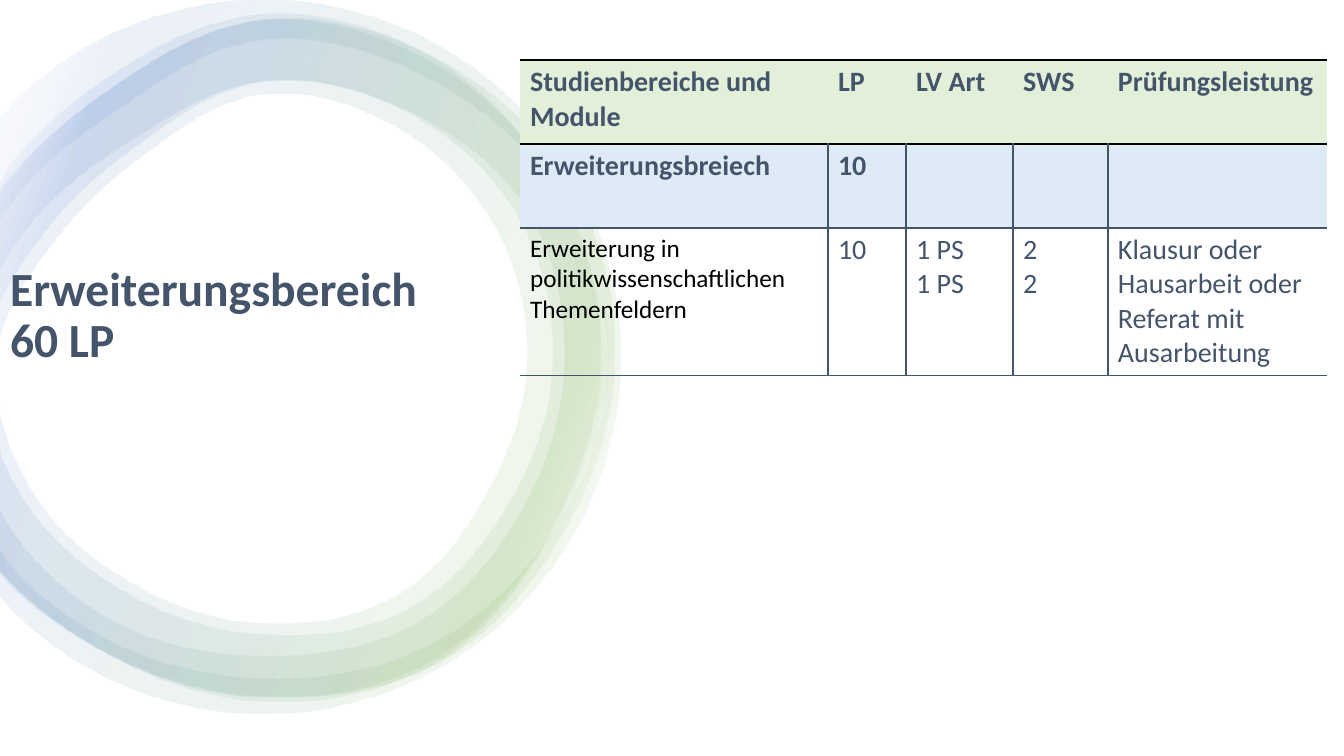
from collections import namedtuple
from dataclasses import dataclass
from math import cos, radians, sin

from lxml import etree
from pptx import Presentation
from pptx.dml.color import RGBColor
from pptx.enum.text import MSO_ANCHOR, PP_ALIGN
from pptx.oxml import parse_xml
from pptx.oxml.ns import qn
from pptx.util import Pt

PX = 914400 / 100.8
TOP = MSO_ANCHOR.TOP
LEFT = PP_ALIGN.LEFT
TITLE_ONLY = 5
DRAWING = "http://schemas.openxmlformats.org/drawingml/2006/main"
NO_STYLE = "{2D5ABB26-0587-4C30-8999-92F81FD0307C}"
Box = namedtuple("Box", "left top width height")


@dataclass(frozen=True)
class Theme:
    font: str = "Calibri"
    ink: str = "44546A"
    black: str = "000000"
    header: str = "E2F0D9"
    section: str = "DEEBF7"
    ring_stops: tuple = ((2, "FFFFFF"), (16, "70AD47"), (85, "4472C4"), (100, "FFFFFF"))
    ring_alpha: int = 10
    ring_angle: int = 200
    title_size: int = 34
    table_size: int = 20
    module_size: int = 18


THEME = Theme()


def inset(radii, depth):
    return [radius - depth for radius in radii]


ROUND = [357] * 12
ROUND_HOLE = [344, 337, 332, 321, 323, 328, 310, 296, 287, 317, 323, 336]
SOFT = [344, 337, 350, 344, 335, 345, 340, 320, 320, 343, 344, 338]
SOFT_HOLE = [300, 299, 306, 298, 303, 305, 295, 268, 254, 276, 285, 301]
WIDE = [351, 347, 352, 339, 334, 340, 340, 313, 308, 337, 345, 352]
NARROW = [338, 335, 346, 339, 334, 340, 340, 312, 309, 337, 340, 340]
RINGS = [(SOFT, SOFT_HOLE), (WIDE, inset(WIDE, 62)),
         (NARROW, inset(NARROW, 74)), (ROUND, ROUND_HOLE)]

COLUMNS = [308, 78, 107, 95, 219]
ROWS = [84, 84, 146]
MODULES = [
    ["Studienbereiche und Module", "LP", "LV Art", "SWS", "Prüfungsleistung"],
    ["Erweiterungsbreiech", "10", "", "", ""],
    ["Erweiterung in politikwissenschaftlichen Themenfeldern", "10", "1 PS\n1 PS", "2\v2",
     "Klausur oder Hausarbeit oder Referat mit Ausarbeitung"],
]


def emu(length):
    return round(length * PX)


def smooth_loop(radii, center_x, center_y, steps=10):
    count = len(radii)
    loop = []
    for index in range(count):
        a, b, c, d = (radii[(index + shift) % count] for shift in (-1, 0, 1, 2))
        for step in range(steps):
            t = step / steps
            radius = (b + t * (c - a) / 2 + t * t * (a - 2.5 * b + 2 * c - d / 2)
                      + t ** 3 * (1.5 * (b - c) + (d - a) / 2))
            angle = radians(360 / count * (index + t))
            x = max(0, center_x + radius * cos(angle))
            loop.append((emu(x), emu(center_y + radius * sin(angle))))
    return loop


def ring_gradient():
    stops = "".join(
        f'<a:gs pos="{position * 1000}"><a:srgbClr val="{color}">'
        f'<a:alpha val="{THEME.ring_alpha * 1000}"/></a:srgbClr></a:gs>'
        for position, color in THEME.ring_stops)
    return parse_xml(f'<a:gradFill xmlns:a="{DRAWING}" rotWithShape="1"><a:gsLst>{stops}</a:gsLst>'
                     f'<a:lin ang="{THEME.ring_angle * 60000}" scaled="0"/></a:gradFill>')


def add_rings(page, box):
    group = page.shapes.add_group_shape()
    center = box.left + box.width - ROUND[0], box.top + box.height / 2
    for outer, inner in RINGS:
        outline = smooth_loop(outer, *center)
        hole = smooth_loop(inner, *center)[::-1]
        builder = group.shapes.build_freeform(*outline[0])
        builder.add_line_segments(outline[1:], close=True)
        builder.move_to(*hole[0])
        builder.add_line_segments(hole[1:], close=True)
        ring = builder.convert_to_shape()
        ring.shadow.inherit = False
        ring.line.fill.background()
        ring._element.spPr.find(qn("a:custGeom")).addnext(ring_gradient())
    page.shapes._spTree.insert(2, group._element)


def style(para, size, color, bold):
    para.alignment = LEFT
    para.font.name = THEME.font
    para.font.size = Pt(size)
    para.font.bold = bold
    para.font.color.rgb = RGBColor.from_string(color)


def add_title(page, box):
    title = page.shapes.title
    title.left, title.top, title.width, title.height = map(emu, box)
    frame = title.text_frame
    frame.word_wrap = True
    frame.vertical_anchor = TOP
    frame.text = "Erweiterungsbereich\v60 LP"
    para = frame.paragraphs[0]
    para.line_spacing = 0.9
    style(para, THEME.title_size, THEME.ink, True)


def set_border(cell, side, color):
    properties = cell._tc.get_or_add_tcPr()
    line = etree.SubElement(properties, qn(f"a:ln{side}"), w=str(Pt(1)))
    fill = etree.SubElement(line, qn("a:solidFill"))
    etree.SubElement(fill, qn("a:srgbClr"), val=color)


def borders(row, column):
    if row == 0:
        return {"T": THEME.black, "B": THEME.black}
    sides = {}
    if column > 0:
        sides["L"] = THEME.ink
    if column < len(COLUMNS) - 1:
        sides["R"] = THEME.ink
    sides["T"] = THEME.black if row == 1 else THEME.ink
    sides["B"] = THEME.ink
    return sides


def add_modules(page, box):
    table = page.shapes.add_table(len(ROWS), len(COLUMNS), *map(emu, box)).table
    table.first_row = table.horz_banding = False
    table._tbl.tblPr.find(qn("a:tableStyleId")).text = NO_STYLE
    for column, width in zip(table.columns, COLUMNS):
        column.width = emu(width)
    for row, height in zip(table.rows, ROWS):
        row.height = emu(height)
    fills = [THEME.header, THEME.section, None]
    for r, texts in enumerate(MODULES):
        for c, text in enumerate(texts):
            cell = table.cell(r, c)
            cell.text = text
            for side, color in borders(r, c).items():
                set_border(cell, side, color)
            if fills[r]:
                cell.fill.solid()
                cell.fill.fore_color.rgb = RGBColor.from_string(fills[r])
            else:
                cell.fill.background()
            module = r == 2 and c == 0
            for para in cell.text_frame.paragraphs:
                style(para, THEME.module_size if module else THEME.table_size,
                      THEME.black if module else THEME.ink, r < 2)


def main():
    deck = Presentation()
    deck.slide_width, deck.slide_height = emu(1344), emu(756)
    page = deck.slides.add_slide(deck.slide_layouts[TITLE_ONLY])
    add_rings(page, Box(0, 0, 620, 714))
    add_title(page, Box(0, 260, 474, 235))
    add_modules(page, Box(520, 60, sum(COLUMNS), sum(ROWS)))
    deck.save("out.pptx")


if __name__ == "__main__":
    main()
